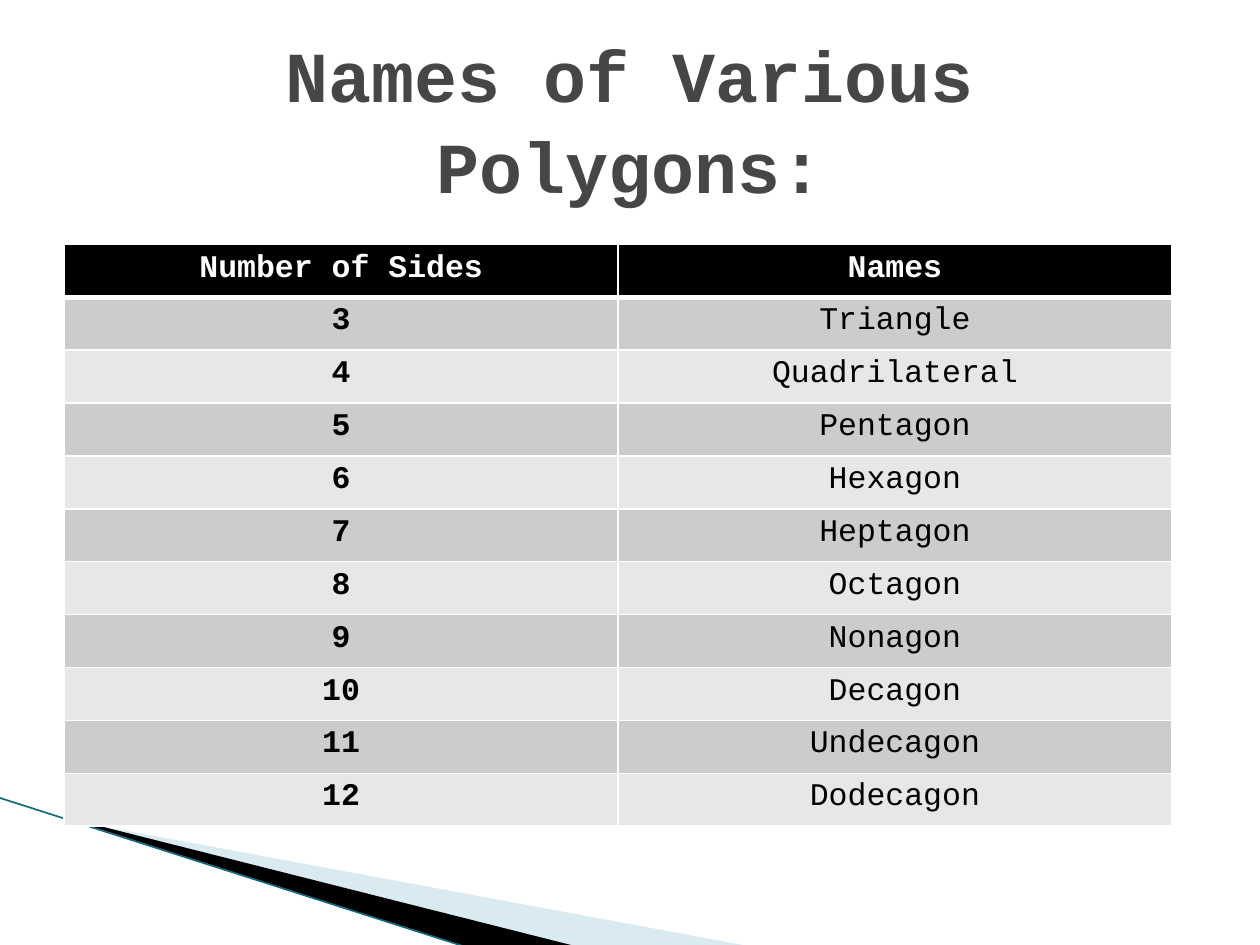
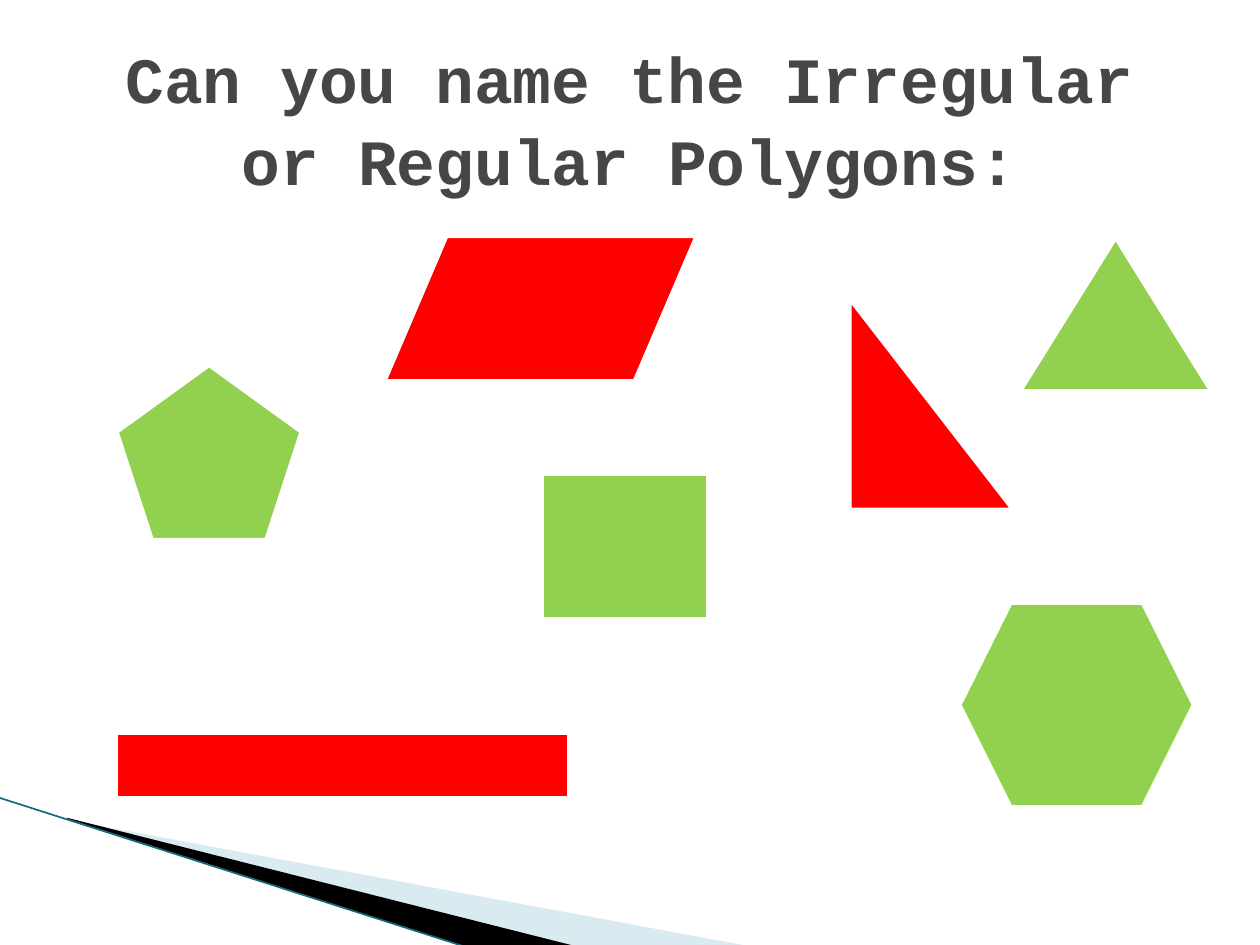
from dataclasses import dataclass
from typing import NamedTuple

from lxml.etree import SubElement
from pptx import Presentation
from pptx.dml.color import RGBColor
from pptx.enum.shapes import MSO_CONNECTOR as Connector, MSO_SHAPE as Preset
from pptx.enum.text import MSO_ANCHOR as Anchor, PP_ALIGN as Align
from pptx.oxml.ns import qn
from pptx.util import Inches, Pt

COLORS = {
    "paper": "FFFFFF", "ink": "000000", "title": "464646",
    "wedge": "A0CBDC", "edge": "15697D",
    "odd row": "CCCCCC", "even row": "E7E7E7",
    "regular": "92D050", "irregular": "FF0000",
}
FONT = "Courier New"

# Page grid: 100 columns by 75 rows
WIDTH, HEIGHT = Inches(10), Inches(7.5)
COLUMNS, ROWS = 100, 75


def across(columns: float) -> int:
    return round(WIDTH * columns / COLUMNS)


def down(rows: float) -> int:
    return round(HEIGHT * rows / ROWS)


class Area(NamedTuple):
    left: float
    top: float
    width: float
    height: float

    def place(self) -> tuple[int, int, int, int]:
        return across(self.left), down(self.top), across(self.width), down(self.height)


@dataclass(frozen=True)
class Wedge:
    color: str
    points: tuple[tuple[float, float], ...]
    opacity: int = 100


@dataclass(frozen=True)
class Polygon:
    preset: Preset
    kind: str
    area: Area


TITLE_AREA = Area(5, 3, 90, 12.5)
TABLE_AREA = Area(5.1, 19.4, 87.9, 46.2)
WEDGES = (
    Wedge("wedge", ((5.5, 65.1), (59.5, 75.1), (45.6, 75.1), (5.5, 65)), opacity=40),
    Wedge("ink", ((5.3, 64.9), (45.7, 75.1), (37.2, 75.2), (5.4, 65))),
)
EDGE = ((-0.1, 63.3), (37.1, 75.2))
POLYGON_NAMES = (
    "Triangle", "Quadrilateral", "Pentagon", "Hexagon", "Heptagon",
    "Octagon", "Nonagon", "Decagon", "Undecagon", "Dodecagon",
)
POLYGONS = (
    Polygon(Preset.RECTANGLE, "regular", Area(42.9, 37.5, 13.4, 11.8)),
    Polygon(Preset.HEXAGON, "regular", Area(76, 47.7, 18.9, 16.5)),
    Polygon(Preset.REGULAR_PENTAGON, "regular", Area(9.1, 28.8, 15, 14.2)),
    Polygon(Preset.RECTANGLE, "irregular", Area(9.1, 58, 36.2, 5.5)),
    Polygon(Preset.ISOSCELES_TRIANGLE, "regular", Area(80.7, 18.6, 15.7, 12.6)),
    Polygon(Preset.FLOWCHART_DATA, "irregular", Area(30.3, 18.6, 25.2, 11.8)),
    Polygon(Preset.RIGHT_TRIANGLE, "irregular", Area(67.3, 23.3, 13.4, 17.3)),
)


def rgb(name: str) -> RGBColor:
    return RGBColor.from_string(COLORS[name])


def paint(part, name: str) -> None:
    part.fill.solid()
    part.fill.fore_color.rgb = rgb(name)


def write(frame, text: str, *, size: float, color: str, bold: bool = False,
          spacing: float | None = None) -> None:
    para = frame.paragraphs[0]
    para.alignment = Align.CENTER
    para.line_spacing = spacing
    span = para.add_run()
    span.text = text
    span.font.name, span.font.size, span.font.bold = FONT, Pt(size), bold
    span.font.color.rgb = rgb(color)


def draw_wedge(page, wedge: Wedge) -> None:
    start, *others = [(across(x), down(y)) for x, y in wedge.points]
    builder = page.shapes.build_freeform(*start)
    builder.add_line_segments(others, close=True)
    shape = builder.convert_to_shape()
    shape.shadow.inherit = False
    shape.line.fill.background()
    paint(shape, wedge.color)
    if wedge.opacity < 100:
        color = shape.fill._xPr.find(qn("a:solidFill"))[0]
        SubElement(color, qn("a:alpha"), val=str(wedge.opacity * 1000))


def draw_edge(page) -> None:
    (x1, y1), (x2, y2) = EDGE
    edge = page.shapes.add_connector(
        Connector.STRAIGHT, across(x1), down(y1), across(x2), down(y2))
    edge.line.color.rgb = rgb("edge")
    edge.line.width = Pt(0.95)
    SubElement(edge._element.spPr, qn("a:effectLst"))


def draw_title(page, text: str, size: float) -> None:
    box = page.shapes.add_textbox(*TITLE_AREA.place())
    box.text_frame.word_wrap = True
    box.text_frame.vertical_anchor = Anchor.MIDDLE
    write(box.text_frame, text, size=size, color="title", bold=True, spacing=1.06)


def add_page(deck):
    page = deck.slides.add_slide(deck.slide_layouts[6])
    for wedge in WEDGES:
        draw_wedge(page, wedge)
    draw_edge(page)
    return page


def add_borders(cell, widths: dict[str, float]) -> None:
    properties = cell._tc.get_or_add_tcPr()
    for side, width in widths.items():
        line = SubElement(properties, qn(f"a:ln{side}"), w=str(Pt(width)))
        fill = SubElement(line, qn("a:solidFill"))
        SubElement(fill, qn("a:srgbClr"), val=COLORS["paper"])


def draw_names_table(page) -> None:
    records = [("Number of Sides", "Names")]
    records += [(str(sides), name) for sides, name in enumerate(POLYGON_NAMES, 3)]
    table = page.shapes.add_table(len(records), 2, *TABLE_AREA.place()).table
    table.first_row = table.horz_banding = False
    for row, record in enumerate(records):
        table.rows[row].height = down(TABLE_AREA.height / len(records))
        header = row == 0
        background = "ink" if header else "odd row" if row % 2 else "even row"
        for column, text in enumerate(record):
            cell = table.cell(row, column)
            add_borders(cell, {"L": 1, "R": 1, "T": 3 if row == 1 else 1,
                               "B": 3 if header else 1})
            paint(cell, background)
            write(cell.text_frame, text, size=18, color="paper" if header else "ink",
                  bold=header or column == 0)


def draw_polygon(page, polygon: Polygon) -> None:
    shape = page.shapes.add_shape(polygon.preset, *polygon.area.place())
    shape.shadow.inherit = False
    paint(shape, polygon.kind)
    shape.line.color.rgb = rgb("paper")
    shape.line.width = Pt(4.33)


def main() -> None:
    deck = Presentation()
    deck.slide_width, deck.slide_height = WIDTH, HEIGHT

    # Names by number of sides
    page = add_page(deck)
    draw_names_table(page)
    draw_title(page, "Names of Various Polygons:", 41)

    # Regular and irregular polygons
    page = add_page(deck)
    for polygon in POLYGONS:
        draw_polygon(page, polygon)
    draw_title(page, "Can you name the Irregular or Regular Polygons:", 36.9)

    deck.save("out.pptx")


if __name__ == "__main__":
    main()
